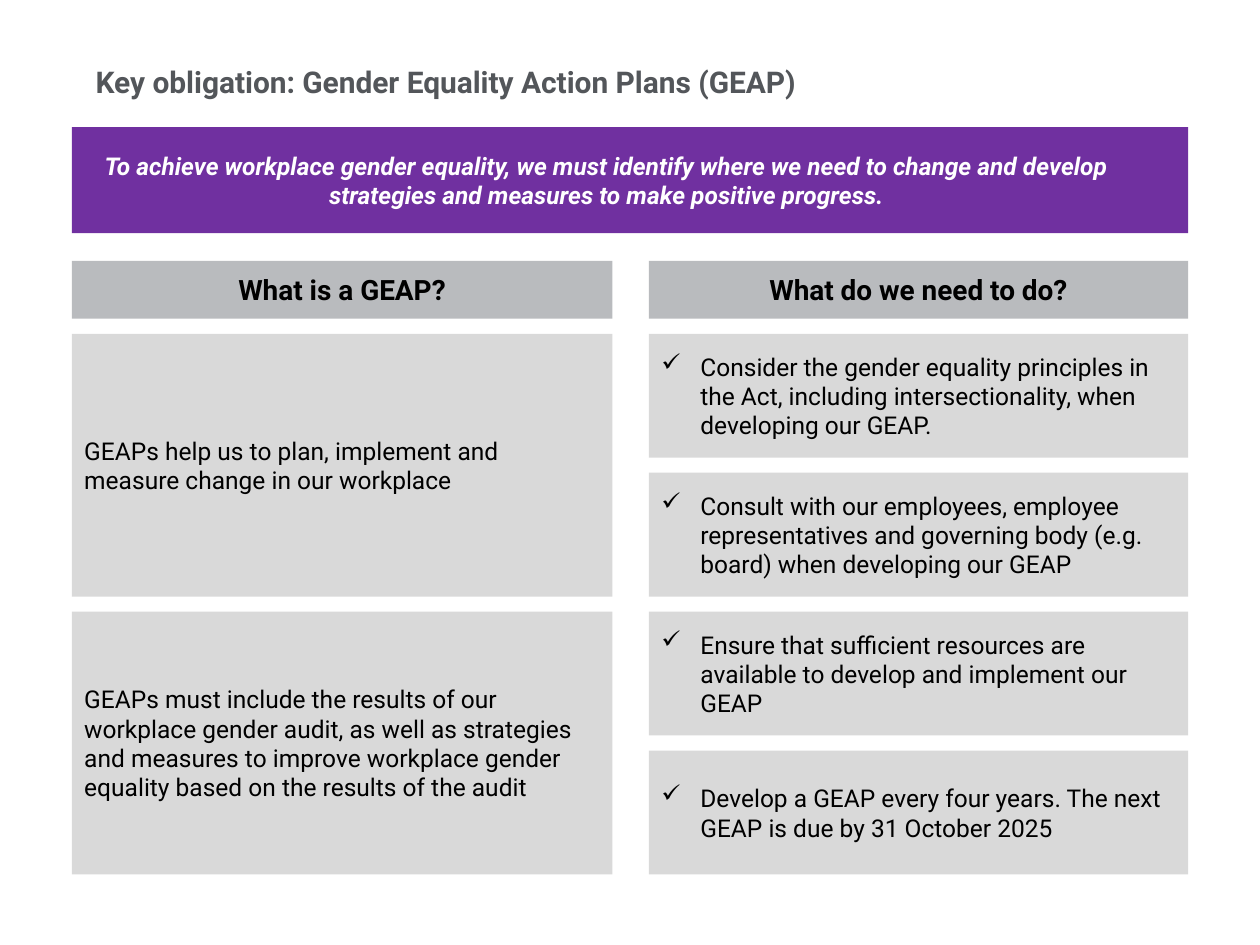
from lxml.etree import SubElement
from pptx import Presentation
from pptx.dml.color import RGBColor
from pptx.enum.shapes import MSO_SHAPE
from pptx.enum.text import MSO_ANCHOR, PP_ALIGN
from pptx.oxml.ns import qn
from pptx.util import Inches, Pt

TITLE = "Key obligation: Gender Equality Action Plans (GEAP)"
MESSAGE = ("To achieve workplace gender equality, we must identify where we need to "
           "change and develop strategies and measures to make positive progress.")
COLUMNS = [
    {"heading": "What is a GEAP?", "left": 0.57, "width": 4.29, "check": False,
     "cards": [
         "GEAPs help us to plan, implement and measure change in our workplace",
         "GEAPs must include the results of our workplace gender audit, as well as "
         "strategies and measures to improve workplace gender equality based on the "
         "results of the audit"]},
    {"heading": "What do we need to do?", "left": 5.15, "width": 4.28, "check": True,
     "cards": [
         "Consider the gender equality principles in the Act, including "
         "intersectionality, when developing our GEAP.",
         "Consult with our employees, employee representatives and governing body "
         "(e.g. board) when developing our GEAP",
         "Ensure that sufficient resources are available to develop and implement "
         "our GEAP",
         "Develop a GEAP every four years. The next GEAP is due by 31 October 2025"]},
]
PURPLE, HEADING_GREY, CARD_GREY = "7030A0", "B9BBBE", "D9D9D9"
TITLE_GREY, BLACK, WHITE = "53565A", "000000", "FFFFFF"
FONT = "Roboto"
HEADING_TOP, HEADING_HEIGHT = 2.07, 0.46
CARDS_TOP, CARDS_BOTTOM, CARD_GAP = 2.65, 6.94, 0.12
INDENT = 0.31


def rgb(value):
    return RGBColor.from_string(value)


def write(s, text, size, color=BLACK, bold=False, italic=False,
          align=PP_ALIGN.LEFT, anchor=MSO_ANCHOR.MIDDLE,
          insets=(0.1, 0.05, 0.1, 0.05)):
    tf = s.text_frame
    frame = {"word_wrap": True, "vertical_anchor": anchor}
    sides = ("margin_left", "margin_top", "margin_right", "margin_bottom")
    frame.update(zip(sides, map(Inches, insets)))
    for name, value in frame.items():
        setattr(tf, name, value)
    p = tf.paragraphs[0]
    p.alignment = align
    r = p.add_run()
    r.text = text
    style = {"name": FONT, "size": Pt(size), "bold": bold, "italic": italic}
    for name, value in style.items():
        setattr(r.font, name, value)
    r.font.color.rgb = rgb(color)
    return p


def add_box(slide, left, top, width, height, fill):
    s = slide.shapes.add_shape(MSO_SHAPE.RECTANGLE, *map(Inches, (left, top, width, height)))
    s.shadow.inherit = False
    s.fill.solid()
    s.fill.fore_color.rgb = rgb(fill)
    s.line.fill.background()
    return s


def add_check(p):
    """Turn a paragraph into a hanging tick bullet."""
    pPr = p._p.get_or_add_pPr()
    pPr.set("marL", str(Inches(INDENT)))
    pPr.set("indent", str(-Inches(INDENT)))
    SubElement(pPr, qn("a:buChar")).set("char", "✓")


def add_column(slide, heading, left, width, check, cards):
    s = add_box(slide, left, HEADING_TOP, width, HEADING_HEIGHT, HEADING_GREY)
    p = write(s, heading, 16, bold=True, align=PP_ALIGN.CENTER)
    p.space_after = Pt(6)
    pitch = (CARDS_BOTTOM - CARDS_TOP + CARD_GAP) / len(cards)
    for i, text in enumerate(cards):
        s = add_box(slide, left, CARDS_TOP + i * pitch, width, pitch - CARD_GAP, CARD_GREY)
        p = write(s, text, 14)
        if check:
            add_check(p)


def main():
    prs = Presentation()
    prs.slide_width, prs.slide_height = Inches(10), Inches(7.5)
    slide = prs.slides.add_slide(prs.slide_layouts[6])

    title = slide.shapes.add_textbox(*map(Inches, (0.76, 0, 6.73, 0.79)))
    write(title, TITLE, 17.1, TITLE_GREY, bold=True,
          anchor=MSO_ANCHOR.BOTTOM, insets=(0, 0, 0, 0))

    banner = add_box(slide, 0.57, 1.01, 8.86, 0.84, PURPLE)
    write(banner, MESSAGE, 14, WHITE, bold=True, italic=True,
          align=PP_ALIGN.CENTER, insets=(0.02, 0.05, 0.39, 0.05))

    for column in COLUMNS:
        add_column(slide, **column)
    prs.save("out.pptx")


if __name__ == "__main__":
    main()
